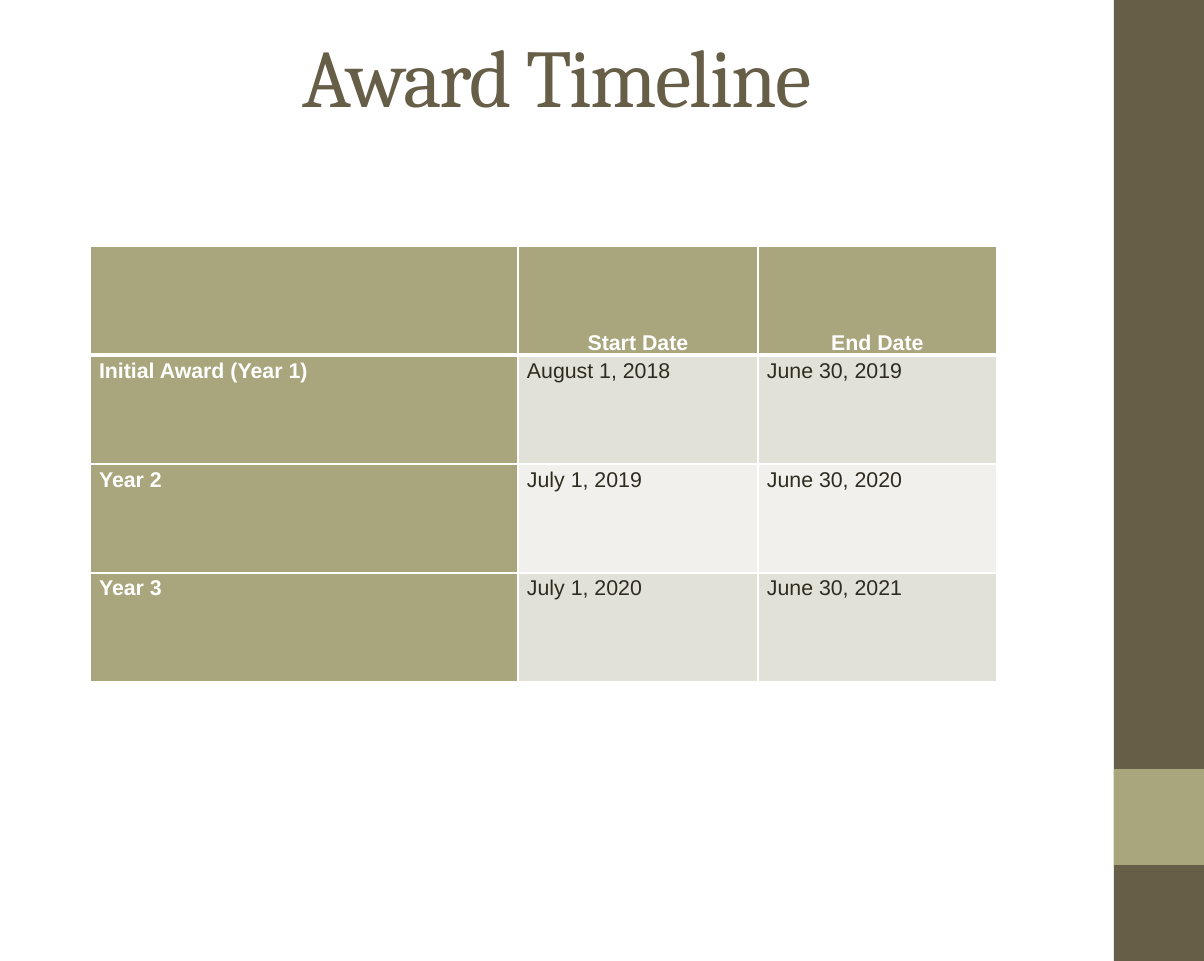
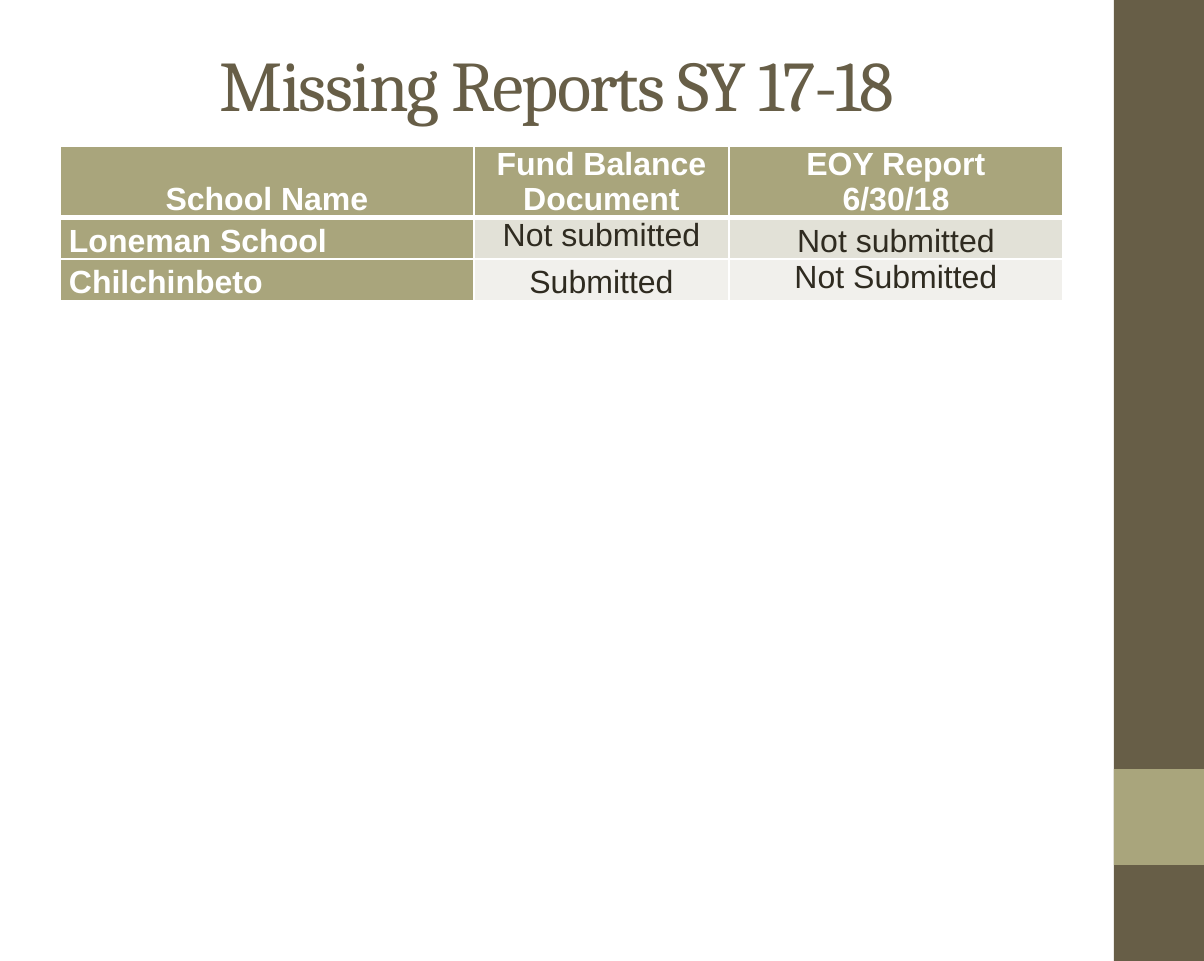
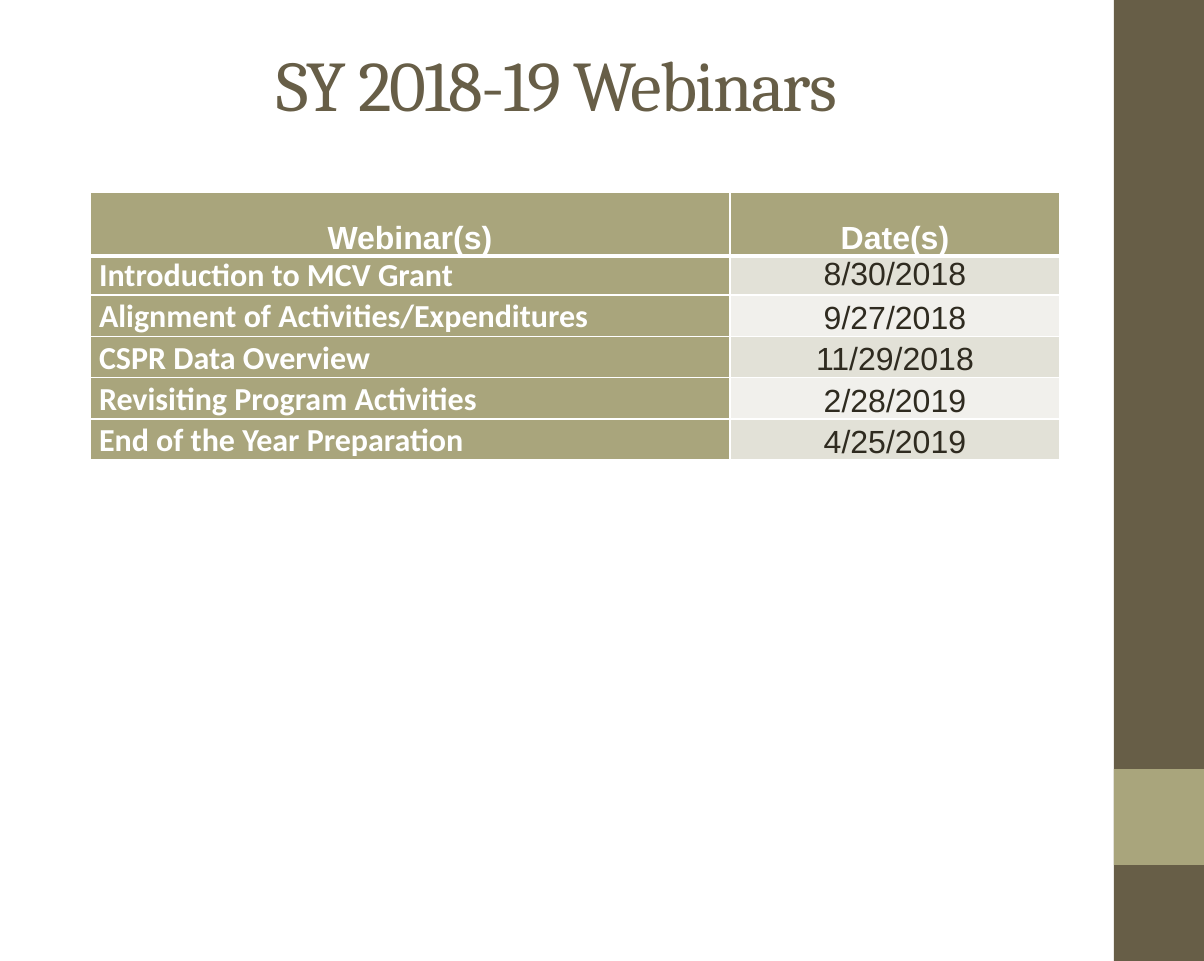
from itertools import product

from lxml.etree import SubElement
from pptx import Presentation
from pptx.dml.color import RGBColor
from pptx.enum.shapes import MSO_SHAPE
from pptx.enum.text import MSO_ANCHOR, MSO_AUTO_SIZE, PP_ALIGN
from pptx.oxml.ns import qn
from pptx.util import Emu, Pt

EMU_PER_PX = 7138


def px(length):
    """Turn whole pixels into EMU."""
    return Emu(length * EMU_PER_PX)


def color(hex_string):
    """Turn a hex string into a colour."""
    return RGBColor.from_string(hex_string)


def write(paragraph, text, *, size, ink, font="Arial", bold=False,
          align=PP_ALIGN.LEFT, spaced=False, tracking=None):
    """Put formatted text into a paragraph."""
    paragraph.text = text
    paragraph.alignment = align
    if spaced:
        paragraph.line_spacing = 1.15
        paragraph.space_after = Pt(10)
    for run in paragraph.runs:
        run.font.name = font
        run.font.size = Pt(size)
        run.font.bold = bold
        run.font.color.rgb = color(ink)
        if tracking is not None:
            run.font.language_id = None
            run.font._element.set("spc", str(tracking * 100))


class Deck:
    """Holds the shared style and the current slide."""

    WIDTH, HEIGHT = 1204, 961
    CONTENT_WIDTH = 1114
    DARK, ACCENT, INK, WHITE = "675E47", "A9A57C", "2F2B20", "FFFFFF"
    BANDING = ("F1F0EC", "E2E1D7")

    def __init__(self):
        """Start a presentation of the shared size."""
        self.presentation = Presentation()
        self.presentation.slide_width = px(self.WIDTH)
        self.presentation.slide_height = px(self.HEIGHT)
        self.slide = None

    def add_slide(self, heading, *, top=3, size=40):
        """Add a slide with its side bands and title."""
        title_only = self.presentation.slide_layouts[5]
        self.slide = self.presentation.slides.add_slide(title_only)
        self.band(0, self.HEIGHT, self.DARK)
        self.band(769, 96, self.ACCENT)
        self.title(heading, top, size)

    def band(self, top, height, fill):
        """Draw a block of the right-hand sidebar."""
        block = self.slide.shapes.add_shape(
            MSO_SHAPE.RECTANGLE, px(self.CONTENT_WIDTH), px(top),
            px(self.WIDTH - self.CONTENT_WIDTH), px(height))
        block.shadow.inherit = False
        block.fill.solid()
        block.fill.fore_color.rgb = color(fill)
        block.line.fill.background()

    def title(self, heading, top, size):
        """Place and fill the title placeholder."""
        title = self.slide.shapes.title
        title.left, title.top = px(0), px(top)
        title.width, title.height = px(self.CONTENT_WIDTH), px(160)
        frame = title.text_frame
        frame.word_wrap = True
        frame.auto_size = MSO_AUTO_SIZE.NONE
        frame.vertical_anchor = MSO_ANCHOR.MIDDLE
        write(frame.paragraphs[0], heading, size=size, ink=self.DARK,
              font="Cambria", align=PP_ALIGN.CENTER, tracking=-1)

    def table(self, rows, *, left, top, widths, heights, size, spaced,
              label_font="Arial", label_anchor=MSO_ANCHOR.BOTTOM,
              body_align=PP_ALIGN.CENTER):
        """Draw a table with a header row and a label column."""
        table = self.slide.shapes.add_table(
            len(rows), len(widths), px(left), px(top),
            px(sum(widths)), px(sum(heights))).table
        table.horz_banding = False
        for column, width in zip(table.columns, widths):
            column.width = px(width)
        for row, height in zip(table.rows, heights):
            row.height = px(height)
        for r, c in product(range(len(rows)), range(len(widths))):
            cell = table.cell(r, c)
            header, label = r == 0, c == 0
            strong = header or label
            cell.margin_left = cell.margin_right = px(9)
            cell.margin_top = cell.margin_bottom = 0
            if header:
                cell.vertical_anchor = MSO_ANCHOR.BOTTOM
            else:
                cell.vertical_anchor = label_anchor if label else MSO_ANCHOR.TOP
            cell.fill.solid()
            cell.fill.fore_color.rgb = color(
                self.ACCENT if strong else self.BANDING[r % 2])
            self.borders(cell, above=3 if r == 1 else 1, below=3 if header else 1)
            if header:
                align = PP_ALIGN.CENTER
            else:
                align = PP_ALIGN.LEFT if label else body_align
            write(cell.text_frame.paragraphs[0], rows[r][c], size=size,
                  ink=self.WHITE if strong else self.INK, bold=strong,
                  font=label_font if label and not header else "Arial",
                  align=align, spaced=(r, c) in spaced)

    def borders(self, cell, above, below):
        """Rule a cell in white with the given line widths."""
        properties = cell._tc.get_or_add_tcPr()
        edges = (("a:lnL", 1), ("a:lnR", 1), ("a:lnT", above), ("a:lnB", below))
        for position, (edge, width) in enumerate(edges):
            line = SubElement(properties, qn(edge), w=str(Pt(width)))
            fill = SubElement(line, qn("a:solidFill"))
            SubElement(fill, qn("a:srgbClr"), val=self.WHITE)
            properties.insert(position, line)


def main():
    """Build the three slides."""
    deck = Deck()

    deck.add_slide("Award Timeline", top=-5, size=46)
    deck.table(
        [("", "Start Date", "End Date"),
         ("Initial Award (Year 1)", "August 1, 2018", "June 30, 2019"),
         ("Year 2", "July 1, 2019", "June 30, 2020"),
         ("Year 3", "July 1, 2020", "June 30, 2021")],
        left=90, top=246, widths=(428, 240, 239), heights=[109] * 4, size=12,
        spaced=set(product(range(4), range(3))),
        label_anchor=MSO_ANCHOR.TOP, body_align=PP_ALIGN.LEFT)

    deck.add_slide("Missing Reports SY 17-18")
    deck.table(
        [("School Name", "Fund Balance Document", "EOY Report\n6/30/18"),
         ("Loneman School", "Not submitted", "Not submitted"),
         ("Chilchinbeto", "Submitted", "Not Submitted")],
        left=60, top=146, widths=(414, 255, 334), heights=(71, 41, 41), size=18,
        spaced={(1, 2), (2, 1)})

    deck.add_slide("SY 2018-19 Webinars")
    deck.table(
        [("Webinar(s)", "Date(s)"),
         ("Introduction to MCV Grant", "8/30/2018"),
         ("Alignment of Activities/Expenditures", "9/27/2018"),
         ("CSPR Data Overview", "11/29/2018"),
         ("Revisiting Program Activities", "2/28/2019"),
         ("End of the Year Preparation", "4/25/2019")],
        left=90, top=192, widths=(640, 330), heights=[64, 39] + [41] * 4, size=18,
        spaced={(r, 1) for r in range(2, 6)}, label_font="Calibri")

    deck.presentation.save("out.pptx")


if __name__ == "__main__":
    main()
